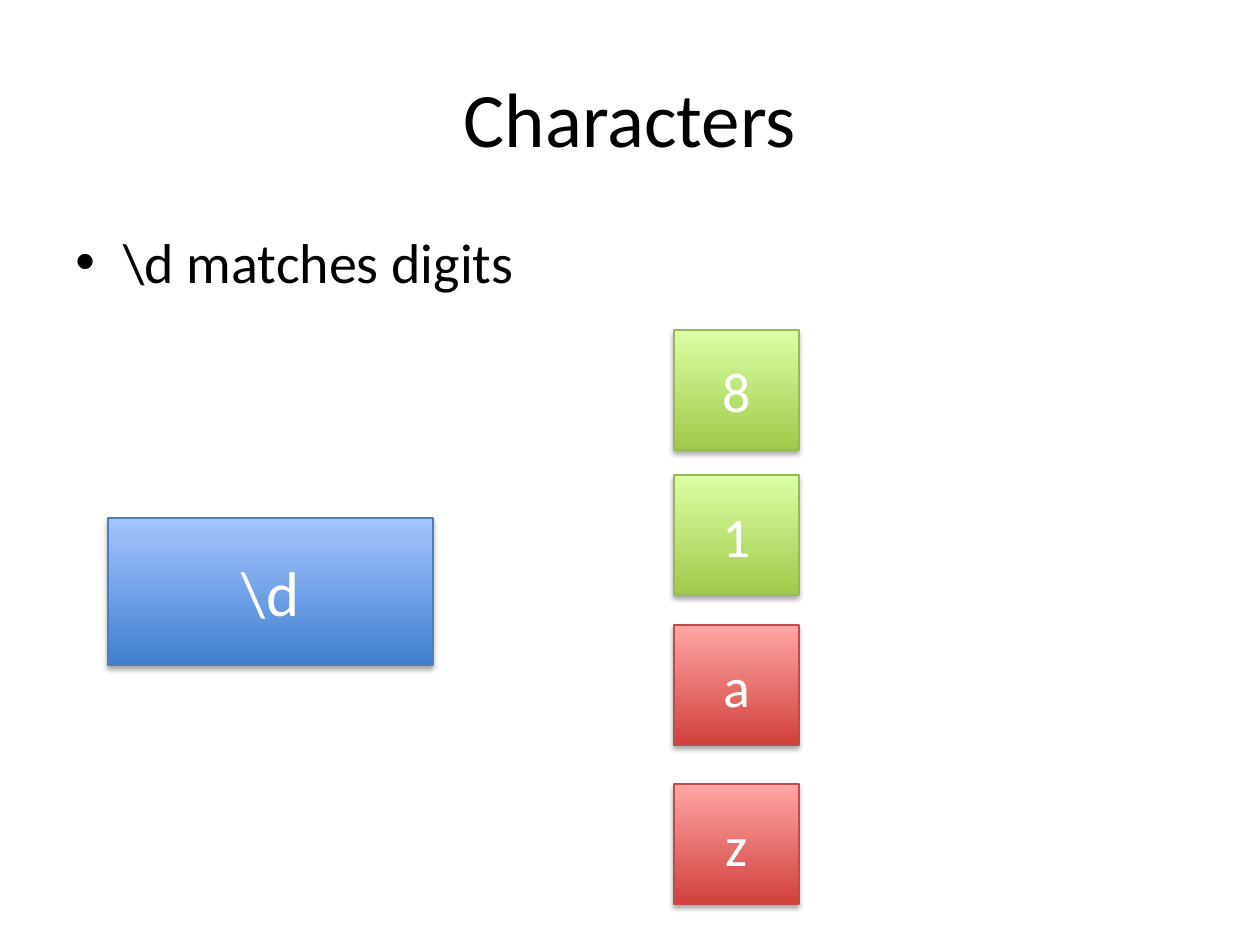
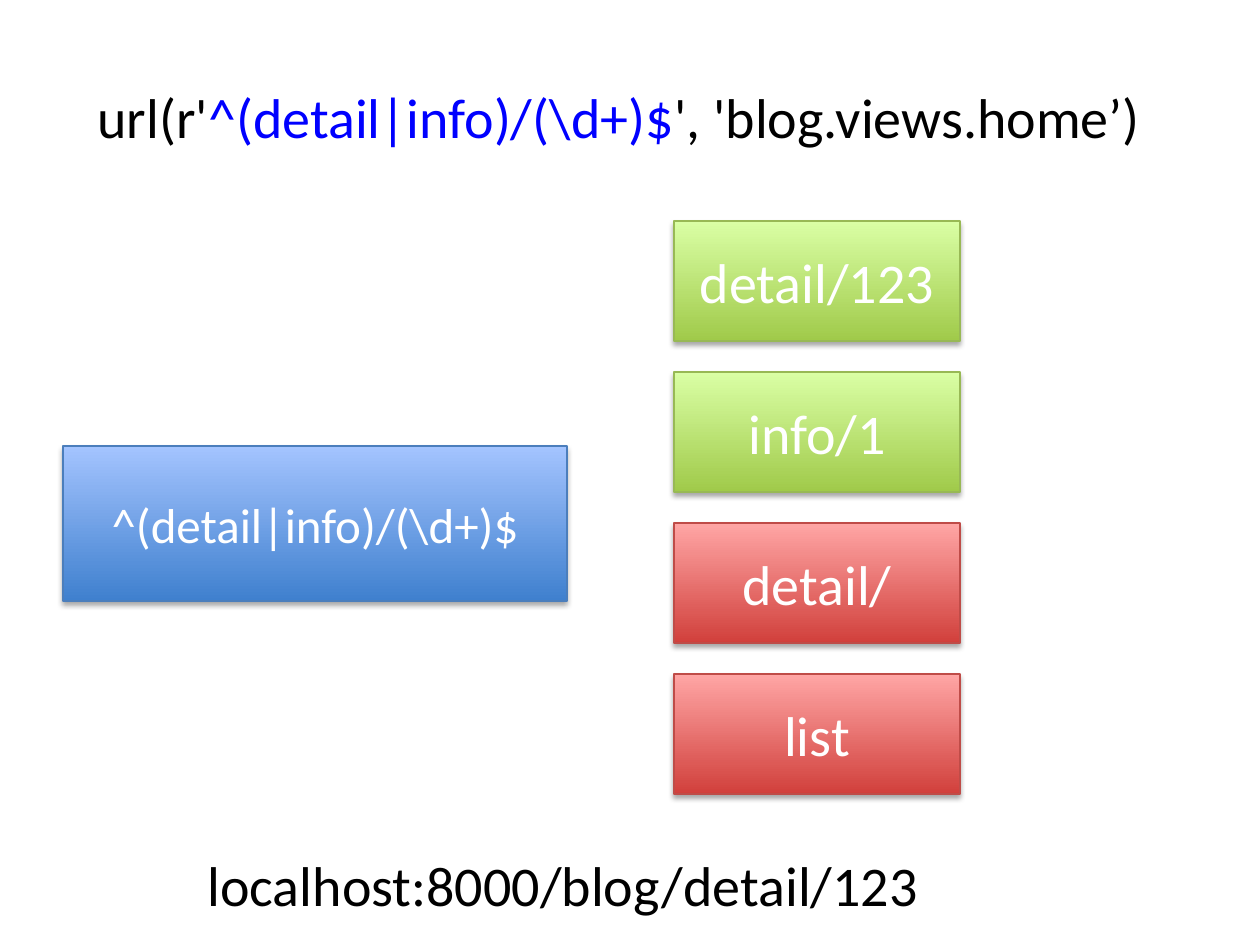
from lxml import etree
from pptx import Presentation
from pptx import util as u
from pptx.dml.color import RGBColor
from pptx.enum import shapes, text
from pptx.oxml.ns import qn

PX_PER_INCH = 126
FONT = "Calibri"
BLACK = RGBColor(0x00, 0x00, 0x00)
WHITE = RGBColor(0xFF, 0xFF, 0xFF)
LINK_BLUE = RGBColor(0x00, 0x00, 0xFF)

# Box styles: bottom colour, top colour, outline
PATTERN = (RGBColor(0x3F, 0x80, 0xCE), RGBColor(0xA4, 0xC4, 0xFF), RGBColor(0x4B, 0x7E, 0xBC))
MATCH = (RGBColor(0xA0, 0xCA, 0x4A), RGBColor(0xDA, 0xFF, 0xA5), RGBColor(0x98, 0xB9, 0x55))
MISS = (RGBColor(0xD1, 0x40, 0x3C), RGBColor(0xFF, 0xA6, 0xA5), RGBColor(0xBF, 0x4C, 0x48))

# Shared places, in px
TITLE_TOP, TITLE_HEIGHT = 38, 157
SAMPLE_LEFT, SAMPLE_HEIGHT = 674, 120

# Content: boxes are (left, top, width, height), samples are (text, style, top)
SLIDES = [
    {
        "title": [("Characters", BLACK)],
        "title_size": 44,
        "title_span": (63, 1134),
        "texts": [(r"\d matches digits", (63, 221, 1134, 624), True)],
        "pattern": (r"\d", 36, (108, 518, 325, 147)),
        "sample_width": 125,
        "samples": [("8", MATCH, 330), ("1", MATCH, 475), ("a", MISS, 625), ("z", MISS, 784)],
    },
    {
        "title": [("url(r'", BLACK), (r"^(detail|info)/(\d+)$", LINK_BLUE),
                  ("', 'blog.views.home’)", BLACK)],
        "title_size": 32,
        "title_span": (21, 1196),
        "texts": [("localhost:8000/blog/detail/123", (195, 844, 765, 81), False)],
        "pattern": (r"^(detail|info)/(\d+)$", 28, (63, 446, 504, 155)),
        "sample_width": 286,
        "samples": [(label, style, 221 + 151 * row) for row, (label, style) in enumerate(
            [("detail/123", MATCH), ("info/1", MATCH), ("detail/", MISS), ("list", MISS)])],
    },
]


def px(value):
    return u.Emu(round(value * u.Inches(1) / PX_PER_INCH))


def style_run(run, size, color):
    run.font.name = FONT
    run.font.size = u.Pt(size)
    run.font.color.rgb = color


def add_text(slide, box, parts, size, centred=False):
    """Add a text box with coloured parts and return its paragraph."""
    text_frame = slide.shapes.add_textbox(*map(px, box)).text_frame
    text_frame.word_wrap = True
    paragraph = text_frame.paragraphs[0]
    if centred:
        text_frame.vertical_anchor = text.MSO_ANCHOR.MIDDLE
        paragraph.alignment = text.PP_ALIGN.CENTER
    for content, color in parts:
        run = paragraph.add_run()
        run.text = content
        style_run(run, size, color)
    return paragraph


def add_bullet(paragraph):
    paragraph.space_before = u.Pt(6.4)
    properties = paragraph._p.get_or_add_pPr()
    properties.set("marL", str(u.Inches(0.38)))
    properties.set("indent", str(-u.Inches(0.38)))
    etree.SubElement(properties, qn("a:buFont"), typeface="Arial")
    etree.SubElement(properties, qn("a:buChar"), char="•")


def add_shadow(shape):
    shape.shadow.inherit = False
    effects = shape._element.spPr.find(qn("a:effectLst"))
    shadow = etree.SubElement(effects, qn("a:outerShdw"), blurRad=str(u.Pt(3.1)),
                              dist=str(u.Pt(1.8)), dir="5400000", rotWithShape="0")
    color = etree.SubElement(shadow, qn("a:srgbClr"), val="000000")
    etree.SubElement(color, qn("a:alpha"), val="35000")


def add_box(slide, box, label, size, style):
    bottom, top, outline = style
    shape = slide.shapes.add_shape(shapes.MSO_SHAPE.RECTANGLE, *map(px, box))
    shape.fill.gradient()
    shape.fill.gradient_angle = 90
    for stop, color in zip(shape.fill.gradient_stops, (bottom, top)):
        stop.color.rgb = color
    shape.line.color.rgb = outline
    shape.line.width = u.Pt(0.75)
    add_shadow(shape)
    shape.text_frame.text = label
    shape.text_frame.vertical_anchor = text.MSO_ANCHOR.MIDDLE
    paragraph = shape.text_frame.paragraphs[0]
    paragraph.alignment = text.PP_ALIGN.CENTER
    style_run(paragraph.runs[0], size, WHITE)


def build_slide(presentation, content):
    slide = presentation.slides.add_slide(presentation.slide_layouts[6])
    # Title and plain text
    left, width = content["title_span"]
    add_text(slide, (left, TITLE_TOP, width, TITLE_HEIGHT),
             content["title"], content["title_size"], centred=True)
    for line, box, bulleted in content["texts"]:
        paragraph = add_text(slide, box, [(line, BLACK)], 32)
        if bulleted:
            add_bullet(paragraph)
    # Pattern on the left, samples on the right
    label, size, box = content["pattern"]
    add_box(slide, box, label, size, PATTERN)
    for label, style, top in content["samples"]:
        box = (SAMPLE_LEFT, top, content["sample_width"], SAMPLE_HEIGHT)
        add_box(slide, box, label, 32, style)


def main():
    presentation = Presentation()
    presentation.slide_width = px(1260)
    presentation.slide_height = px(945)
    for content in SLIDES:
        build_slide(presentation, content)
    presentation.save("out.pptx")


if __name__ == "__main__":
    main()
